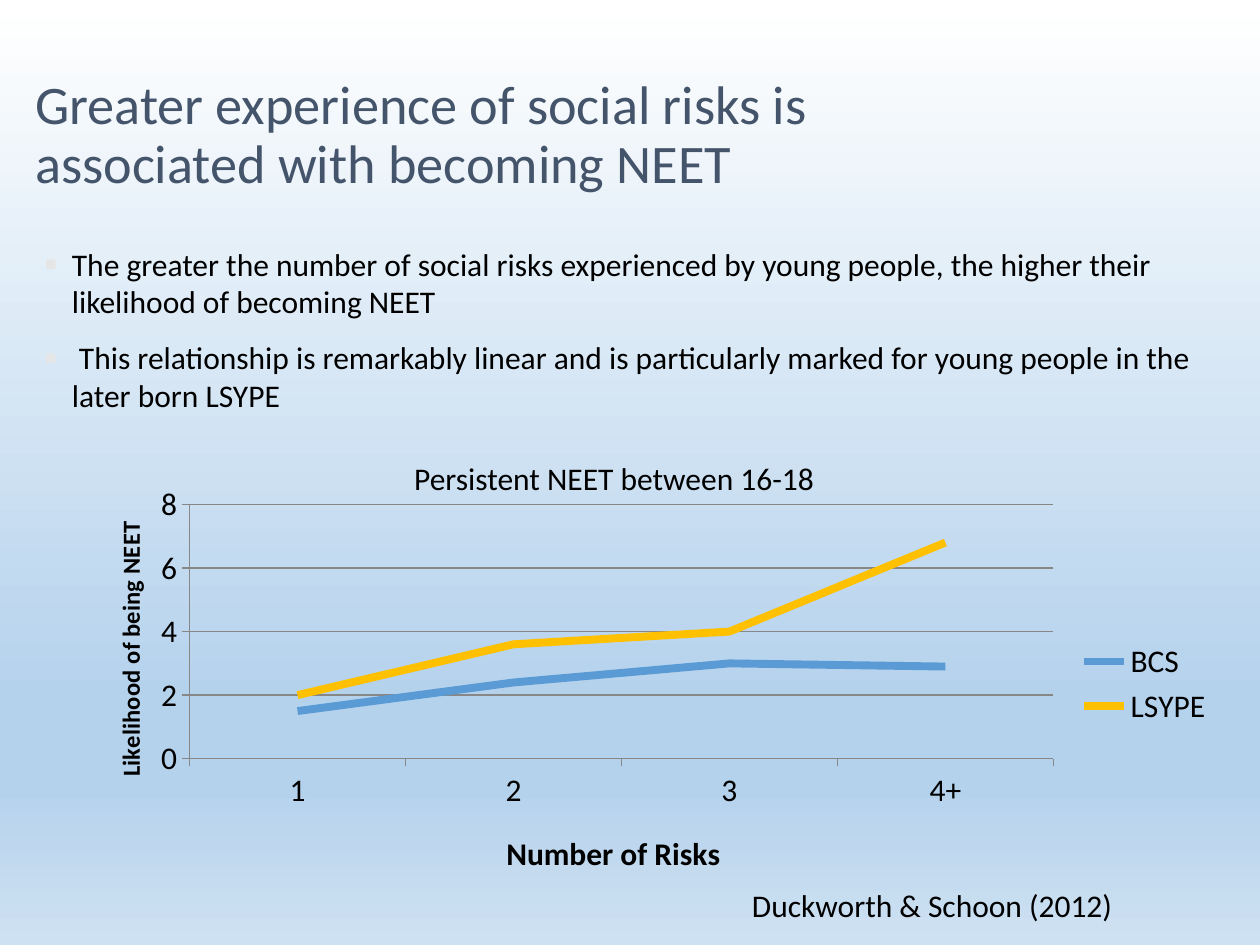
import pptx
import pptx.chart.data
import pptx.dml.color
import pptx.enum.chart
import pptx.enum.text
import pptx.oxml
import pptx.oxml.ns
import pptx.util
from pptx.util import Cm, Pt

RGB = pptx.dml.color.RGBColor
BLACK = RGB(0, 0, 0)
SLATE = RGB(0x44, 0x54, 0x6A)
PALE = RGB(0xE7, 0xE6, 0xE6)
GREY = RGB(0x87, 0x87, 0x87)
BLUE = RGB(0x5B, 0x9B, 0xD5)
GOLD = RGB(0xFF, 0xC0, 0x00)
WHITE = RGB(0xFF, 0xFF, 0xFF)
SKY = RGB(0xB5, 0xD2, 0xEC)
MIST = RGB(0xCE, 0xE1, 0xF2)
FONT = "Calibri"


def node(xml):
    """Parse an XML snippet written with the a, c and p prefixes."""
    head, tail = xml.split(">", 1)
    names = pptx.oxml.ns.nsdecls("a", "c", "p")
    if head.endswith("/"):
        return pptx.oxml.parse_xml(f"{head[:-1]} {names}/>{tail}")
    return pptx.oxml.parse_xml(f"{head} {names}>{tail}")


def style(font, size=18, color=BLACK, bold=False):
    """Set face, size, colour and weight of a font."""
    font.name, font.size, font.bold = FONT, Pt(size), bold
    font.color.rgb = color


def write(frame, *texts, pad=(0, 0), before=0, pitch=None, mark=False, **look):
    """Fill a text frame with one paragraph per text."""
    frame.word_wrap = True
    frame.margin_left = frame.margin_right = Cm(pad[0])
    frame.margin_top = frame.margin_bottom = Cm(pad[1])
    for i, text in enumerate(texts):
        para = frame.add_paragraph() if i else frame.paragraphs[0]
        para.alignment = pptx.enum.text.PP_ALIGN.LEFT
        para.space_before = Pt(before)
        if pitch:
            para.line_spacing = Pt(pitch)
        run = para.add_run()
        run.text = text
        style(run.font, **look)
        if mark:
            props = para._p.get_or_add_pPr()
            props.set("marL", str(Cm(0.56)))
            props.set("indent", str(-Cm(0.56)))
            for xml in (f'<a:buClr><a:srgbClr val="{PALE}"/></a:buClr>',
                        '<a:buSzPct val="120000"/>',
                        '<a:buFont typeface="Arial"/>',
                        '<a:buChar char="▪"/>'):
                props.append(node(xml))


def place(parent, index, inner=False, **spots):
    """Give a chart part a manual layout, as shares of the chart."""
    for old in parent.findall(pptx.oxml.ns.qn("c:layout")):
        parent.remove(old)
    body = '<c:layoutTarget val="inner"/>' if inner else ""
    body += "".join(f'<c:{k}Mode val="edge"/>' for k in "xy")
    body += "".join(f'<c:{k} val="{v}"/>' for k, v in spots.items())
    parent.insert(index, node(
        f"<c:layout><c:manualLayout>{body}</c:manualLayout></c:layout>"))


class Deck:
    """Hold the file and the current slide."""

    def __init__(self):
        self.file = pptx.Presentation()
        self.file.slide_width, self.file.slide_height = Cm(25.4), Cm(19.05)
        self.slide = self.file.slides.add_slide(self.file.slide_layouts[5])

    def back(self, *stops):
        """Paint a top-down gradient behind the slide."""
        marks = "".join(
            f'<a:gs pos="{at * 1000}"><a:srgbClr val="{color}"/></a:gs>'
            for at, color in stops)
        self.slide._element.cSld.insert(0, node(
            f'<p:bg><p:bgPr><a:gradFill rotWithShape="1"><a:gsLst>{marks}'
            '</a:gsLst><a:lin ang="5400000" scaled="0"/></a:gradFill>'
            "<a:effectLst/></p:bgPr></p:bg>"))

    def title(self, text, box, **look):
        """Move and fill the title."""
        shape = self.slide.shapes.title
        shape.left, shape.top, shape.width, shape.height = map(Cm, box)
        frame = shape.text_frame
        frame.vertical_anchor = pptx.enum.text.MSO_ANCHOR.BOTTOM
        write(frame, text, **look)

    def text(self, box, *texts, **look):
        """Add a text box."""
        shape = self.slide.shapes.add_textbox(*map(Cm, box))
        write(shape.text_frame, *texts, **look)

    def chart(self, box, cats, rows):
        """Add a line chart from rows of name, colour and values."""
        data = pptx.chart.data.CategoryChartData()
        data.categories = cats
        for name, _, vals in rows:
            data.add_series(name, vals)
        kind = pptx.enum.chart.XL_CHART_TYPE.LINE
        chart = self.slide.shapes.add_chart(kind, *map(Cm, box), data).chart
        style(chart.font)
        chart.has_title = False
        chart.has_legend = True
        chart.legend.position = pptx.enum.chart.XL_LEGEND_POSITION.RIGHT
        chart.legend.include_in_layout = False
        plot = chart.plots[0]
        plot.vary_by_categories = False
        for line, (_, color, _) in zip(plot.series, rows):
            line.smooth = False
            line.marker.style = pptx.enum.chart.XL_MARKER_STYLE.NONE
            line.format.line.color.rgb = color
            line.format.line.width = Pt(4.5)
        place(chart._chartSpace.chart.plotArea, 0, True,
              x=0.1, y=0.07, w=0.75, h=0.61)
        return chart

    def axis(self, axis, text, size, x, y):
        """Style an axis and give it a title."""
        axis.major_tick_mark = pptx.enum.chart.XL_TICK_MARK.OUTSIDE
        axis.format.line.color.rgb = GREY
        frame = axis.axis_title.text_frame
        frame.text = text
        style(frame.paragraphs[0].runs[0].font, size, bold=True)
        place(axis.axis_title._element, 1, x=x, y=y)


def main():
    """Build the slide."""
    deck = Deck()
    deck.back((0, WHITE), (74, SKY), (83, SKY), (100, MIST))
    deck.title(
        "Greater experience of social risks is associated with becoming NEET",
        (0.71, 0.74, 17.07, 3.17), size=31, color=SLATE, pitch=33.3)
    deck.text(
        (0.89, 4.93, 23.6, 11.5),
        "The greater the number of social risks experienced by young people, "
        "the higher their likelihood of becoming NEET",
        " This relationship is remarkably linear and is particularly marked "
        "for young people in the later born LSYPE",
        before=10.5, mark=True)
    chart = deck.chart(
        (1.5, 9.58, 23.22, 8.41), ("1", "2", "3", "4+"),
        (("BCS", BLUE, (1.5, 2.4, 3, 2.9)),
         ("LSYPE", GOLD, (2, 3.6, 4, 6.8))))
    deck.axis(chart.category_axis, "Number of Risks", 18, 0.37, 0.84)
    value = chart.value_axis
    deck.axis(value, "Likelihood of being NEET", 14, 0.03, 0.1)
    value.minimum_scale, value.maximum_scale, value.major_unit = 0, 8, 2
    value.has_major_gridlines = True
    value.major_gridlines.format.line.color.rgb = GREY
    pad = (0.25, 0.13)
    deck.text((8.1, 9.12, 9.53, 0.99), "Persistent NEET between 16-18", pad=pad)
    deck.text((14.91, 17.73, 10, 1.8), "Duckworth & Schoon (2012)", pad=pad)
    deck.file.save("out.pptx")


if __name__ == "__main__":
    main()
